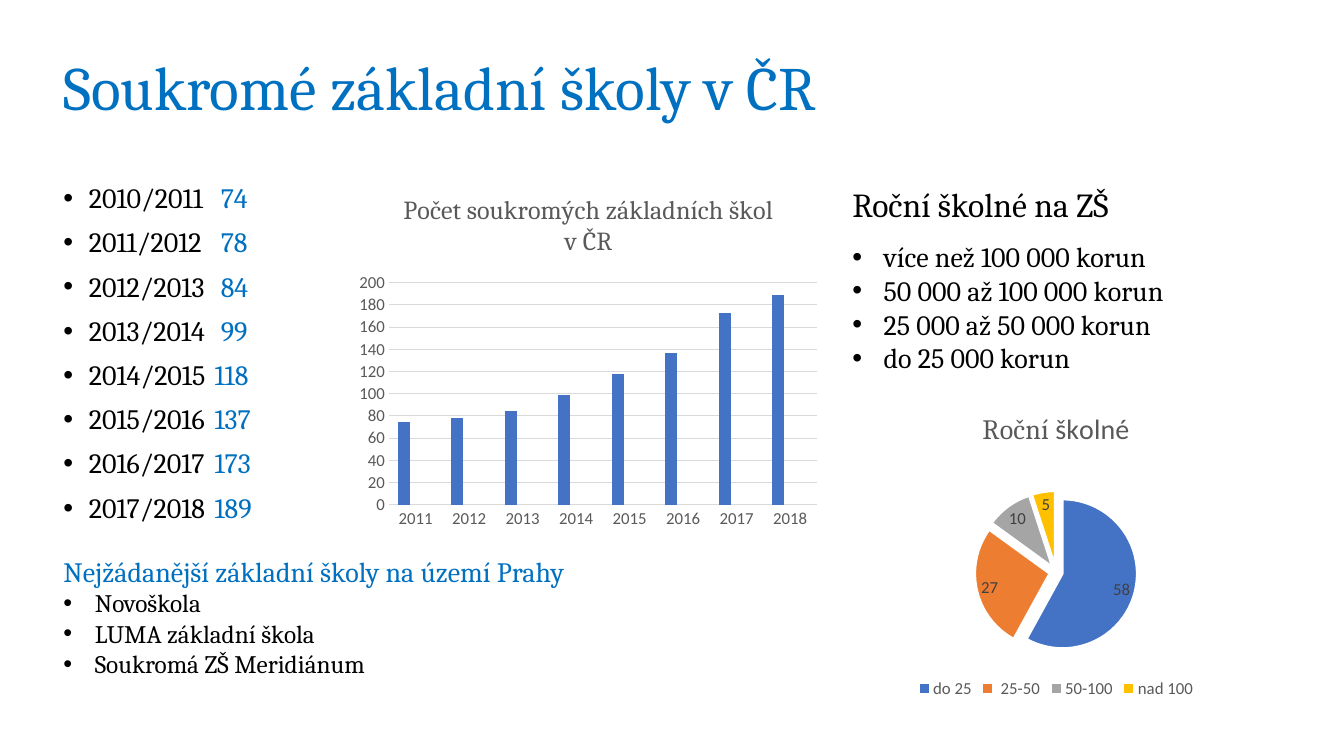
import pptx
import pptx.chart.data
import pptx.dml.color
import pptx.enum.chart
import pptx.enum.text
import pptx.oxml
import pptx.oxml.ns
import pptx.util

Cm = pptx.util.Cm
Pt = pptx.util.Pt
XL = pptx.enum.chart
qn = pptx.oxml.ns.qn

SERIF, SANS = "Cambria", "Calibri"
BLACK, BLUE, GREY = "000000", "0070C0", "595959"
ACCENTS = ["4472C4", "ED7D31", "A5A5A5", "FFC000"]


def rgb(value):
    return pptx.dml.color.RGBColor.from_string(value)


def set_font(font, size, color, name=SERIF):
    font.size = Pt(size)
    font.name = name
    font.bold = False
    font.color.rgb = rgb(color)


def chart_xml(body):
    return pptx.oxml.parse_xml(body.replace("/>", f" {pptx.oxml.ns.nsdecls('c')}/>", 1)
                               if body.endswith("/>") and body.count("<") == 1
                               else body.replace(">", f" {pptx.oxml.ns.nsdecls('c')}>", 1))


class Deck:
    def __init__(self):
        self.prs = pptx.Presentation()
        self.prs.slide_width, self.prs.slide_height = Cm(33.87), Cm(19.05)
        self.s = self.prs.slides.add_slide(self.prs.slide_layouts[6])

    def text(self, box, paragraphs, wrap=True, middle=False, spacing=None):
        tf = self.s.shapes.add_textbox(*map(Cm, box)).text_frame
        tf.word_wrap = wrap
        if middle:
            tf.vertical_anchor = pptx.enum.text.MSO_ANCHOR.MIDDLE
        for i, (indent, before, runs) in enumerate(paragraphs):
            p = tf.paragraphs[0] if i == 0 else tf.add_paragraph()
            if spacing:
                p.line_spacing = spacing
            p.space_before = Pt(before)
            if indent:
                self.bullet(p, indent)
            for text, size, color in runs:
                r = p.add_run()
                r.text = text
                set_font(r.font, size, color)

    def bullet(self, p, indent):
        pPr = p._p.get_or_add_pPr()
        pPr.set("marL", str(Cm(indent)))
        pPr.set("indent", str(-Cm(indent)))
        pPr.append(pptx.oxml.parse_xml(
            f'<a:buFont {pptx.oxml.ns.nsdecls("a")} typeface="Arial"/>'))
        pPr.append(pptx.oxml.parse_xml(
            f'<a:buChar {pptx.oxml.ns.nsdecls("a")} char="•"/>'))

    def chart(self, kind, box, categories, series, title, plot_box):
        data = pptx.chart.data.CategoryChartData()
        data.categories = categories
        for name, values in series:
            data.add_series(name, values)
        chart = self.s.shapes.add_chart(kind, *map(Cm, box), data).chart
        set_font(chart.font, 10, BLACK, SANS)
        chart.has_legend = False
        chart.has_title = True
        chart.chart_title.include_in_layout = False
        p = chart.chart_title.text_frame.paragraphs[0]
        for text, size, name in title:
            r = p.add_run()
            r.text = text
            set_font(r.font, size, GREY, name)
        area = chart.element.find(".//" + qn("c:plotArea"))
        for old in area.findall(qn("c:layout")):
            area.remove(old)
        sizes = "".join(f'<c:{k} val="{v}"/>' for k, v in zip("xywh", plot_box))
        area.insert(0, chart_xml(
            '<c:layout><c:manualLayout><c:layoutTarget val="inner"/>'
            '<c:xMode val="edge"/><c:yMode val="edge"/>'
            f'{sizes}</c:manualLayout></c:layout>'))
        chart.plots[0].vary_by_categories = False
        return chart

    def columns(self, box, categories, series, title, plot_box):
        chart = self.chart(XL.XL_CHART_TYPE.COLUMN_CLUSTERED, box,
                           categories, series, title, plot_box)
        plot = chart.plots[0]
        plot.gap_width, plot.overlap = 150, 0
        for ser, color in zip(plot.series, ACCENTS):
            ser.format.fill.solid()
            ser.format.fill.fore_color.rgb = rgb(color)
        for axis in (chart.category_axis, chart.value_axis):
            axis.major_tick_mark = axis.minor_tick_mark = XL.XL_TICK_MARK.NONE
            set_font(axis.tick_labels.font, 12, GREY, SANS)
            axis.format.line.fill.background()
        axis = chart.value_axis
        axis.minimum_scale, axis.maximum_scale, axis.major_unit = 0, 200, 20
        axis.has_major_gridlines = True
        axis.major_gridlines.format.line.color.rgb = rgb("D9D9D9")
        axis.major_gridlines.format.line.width = Pt(0.75)

    def pie(self, box, categories, series, title, plot_box, explosion):
        chart = self.chart(XL.XL_CHART_TYPE.PIE, box,
                           categories, series, title, plot_box)
        plot = chart.plots[0]
        plot.vary_by_categories = True
        for i, color in enumerate(ACCENTS):
            fmt = plot.series[0].points[i].format
            fmt.fill.solid()
            fmt.fill.fore_color.rgb = rgb(color)
            fmt.line.color.rgb = rgb("FFFFFF")
            fmt.line.width = Pt(1.5)
        chart.element.find(".//" + qn("c:dPt")).addprevious(
            chart_xml(f'<c:explosion val="{explosion}"/>'))
        labels = plot.series[0].data_labels
        labels.show_value = True
        labels.position = XL.XL_LABEL_POSITION.BEST_FIT
        set_font(labels.font, 12, "404040", SANS)
        chart.has_legend = True
        chart.legend.position = XL.XL_LEGEND_POSITION.BOTTOM
        chart.legend.include_in_layout = False
        set_font(chart.legend.font, 12, GREY, SANS)


def main():
    counts = [74, 78, 84, 99, 118, 137, 173, 189]
    years = range(2011, 2019)
    fees = ["více než 100 000 korun", "50 000 až 100 000 korun",
            "25 000 až 50 000 korun", "do 25 000 korun"]
    schools = ["Novoškola", "LUMA základní škola", "Soukromá ZŠ Meridiánum"]

    deck = Deck()
    deck.text((1.35, 0.86, 29.21, 2.82),
              [(0, 0, [("Soukromé základní školy v ČR", 44, BLUE)])],
              middle=True, spacing=0.9)
    deck.text((1.35, 4.52, 30.66, 13.64),
              [(0.64, 10, [(f"{year - 1}/{year}\t" + (" " if n < 100 else ""), 20, BLACK),
                           (str(n), 20, BLUE)])
               for year, n in zip(years, counts)], spacing=0.9)
    empty = [None] * len(counts)
    deck.columns((8.84, 4.42, 11.99, 9.02), [str(year) for year in years],
                 [("Series 1", counts), ("Series 2", empty), ("Series 3", empty)],
                 [("Počet soukromých základních škol v ČR", 18.6, SERIF)],
                 (0.08, 0.3, 0.9, 0.62))
    deck.text((21.23, 4.52, 7.72, 1.27),
              [(0, 0, [("Roční školné na ZŠ", 24, BLACK)])], wrap=False)
    deck.text((21.23, 5.92, 9.88, 3.68),
              [(0.79, 0, [(fee, 20, BLACK)]) for fee in fees])
    deck.pie((21.23, 9.98, 10.77, 7.72), ["do 25", " 25-50", "50-100", "nad 100"],
             [("Series 1", [58, 27, 10, 5])],
             [("Roční ", 20, SERIF), ("školné", 20, SANS)],
             (0.31, 0.31, 0.38, 0.53), 9)
    deck.text((1.35, 13.84, 14.27, 3.43),
              [(0, 0, [("Nejžádanější základní školy na území Prahy", 20, BLUE)])]
              + [(0.79, 0, [(school, 18, BLACK)]) for school in schools], wrap=False)
    deck.prs.save("out.pptx")


if __name__ == "__main__":
    main()
